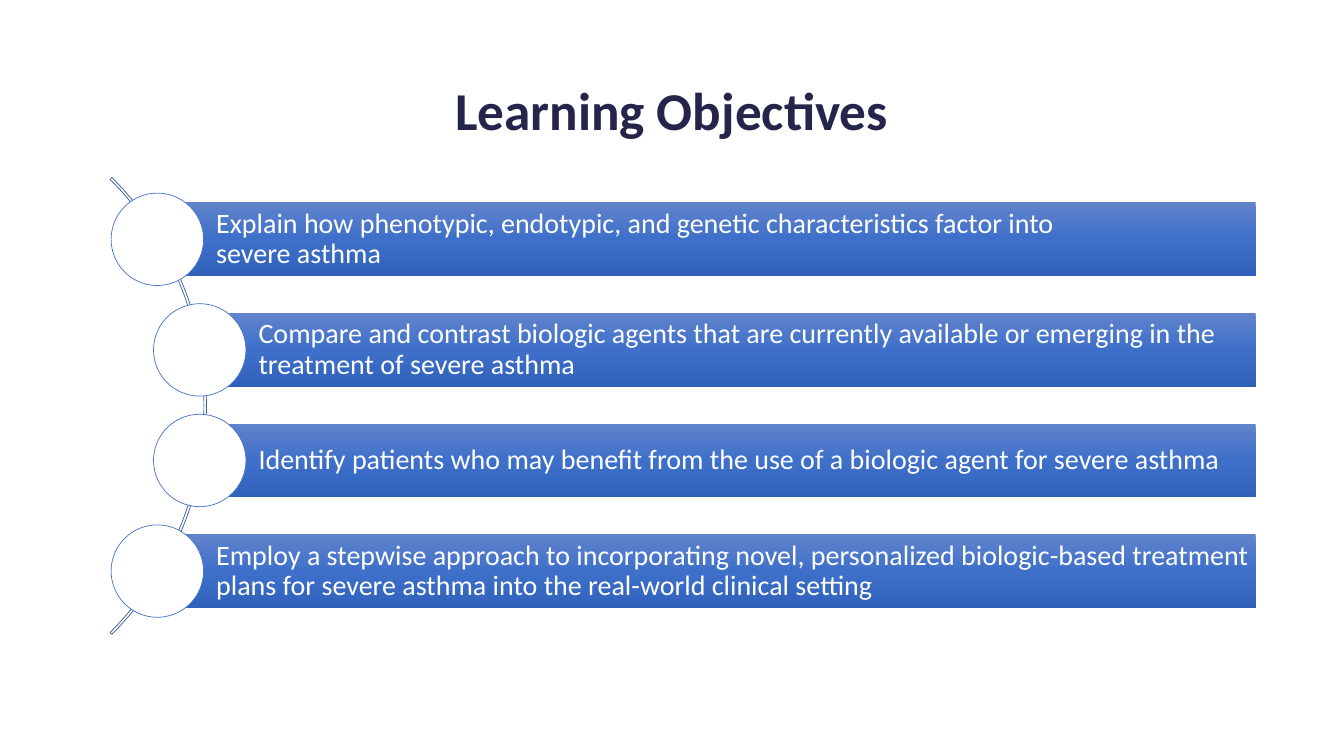
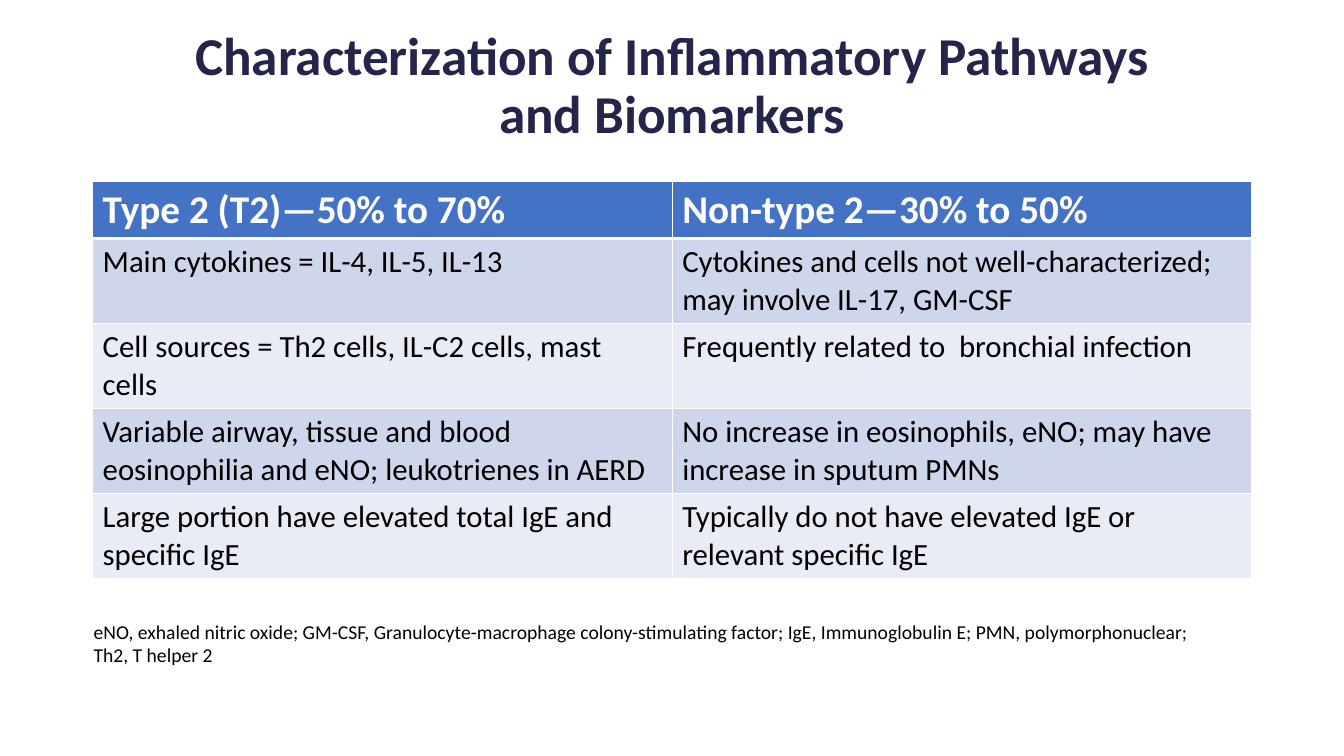
import copy

from lxml import etree
from pptx import Presentation
from pptx.dml.color import RGBColor
from pptx.enum import shapes, text
from pptx.oxml import ns
from pptx.util import Pt

FONT = "Calibri"
NAVY = RGBColor(0x25, 0x25, 0x4B)
BLUE = RGBColor(0x44, 0x72, 0xC4)
ARC_BLUE = RGBColor(0x36, 0x5B, 0x9D)
BAR_STOPS = [RGBColor(0x61, 0x83, 0xCB), RGBColor(0x3E, 0x70, 0xCA), RGBColor(0x30, 0x62, 0xBB)]
BAND_DARK = RGBColor(0xCF, 0xD5, 0xEA)
BAND_LIGHT = RGBColor(0xE9, 0xEB, 0xF5)
WHITE = RGBColor(0xFF, 0xFF, 0xFF)
BLACK = RGBColor(0x00, 0x00, 0x00)


def write(tf, lines, size, color, bold=False, align=text.PP_ALIGN.LEFT, spacing=None):
    """Fill the first paragraph, one run per line."""
    tf.word_wrap = True
    p = tf.paragraphs[0]
    p.alignment = align
    p.line_spacing = spacing
    for i, line in enumerate(lines):
        if i:
            p.add_line_break()
        r = p.add_run()
        r.text = line
        r.font.name = FONT
        r.font.size = Pt(size)
        r.font.bold = bold
        r.font.color.rgb = color


def add_titled_slide(lines, left, top, width):
    s = prs.slides.add_slide(prs.slide_layouts[6])
    tf = s.shapes.add_textbox(Pt(left), Pt(top), Pt(width), Pt(104.4)).text_frame
    tf.vertical_anchor = text.MSO_ANCHOR.MIDDLE
    write(tf, lines, 38, NAVY, True, text.PP_ALIGN.CENTER, 0.9)
    return s


prs = Presentation()
prs.slide_width, prs.slide_height = Pt(960), Pt(540)

# Slide 1: objectives along an arc
s = add_titled_slide(["Learning Objectives"], 48, 28.8, 864)

arc = s.shapes.add_shape(shapes.MSO_SHAPE.BLOCK_ARC, Pt(-314), Pt(59.2), Pt(461.5), Pt(461.5))
arc.adjustments[0] = 189
arc.adjustments[1] = 27
arc.adjustments[2] = 0.004
arc.shadow.inherit = False
arc.fill.background()
arc.line.color.rgb = ARC_BLUE
arc.line.width = Pt(0.5)

OUTER, INNER = 112.4, 142.7
BAR_RIGHT, BAR_TOP, BAR_HEIGHT, BAR_PITCH = 897, 144.6, 52.7, 79
CIRCLE = 66

objectives = [
    (OUTER, ["Explain how phenotypic, endotypic, and genetic characteristics factor into",
             "severe asthma"]),
    (INNER, ["Compare and contrast biologic agents that are currently available or emerging "
             "in the treatment of severe asthma"]),
    (INNER, ["Identify patients who may benefit from the use of a biologic agent for severe asthma"]),
    (OUTER, ["Employ a stepwise approach to incorporating novel, personalized biologic-based "
             "treatment plans for severe asthma into the real-world clinical setting"]),
]
for i, (left, lines) in enumerate(objectives):
    top = BAR_TOP + i * BAR_PITCH

    # Gradient bar with its text
    bar = s.shapes.add_shape(shapes.MSO_SHAPE.RECTANGLE, Pt(left), Pt(top),
                             Pt(BAR_RIGHT - left), Pt(BAR_HEIGHT))
    bar.shadow.inherit = False
    bar.line.fill.background()
    bar.fill.gradient()
    bar.fill.gradient_angle = 270
    stops = bar._element.spPr.find(".//" + ns.qn("a:gsLst"))
    stops.insert(1, copy.deepcopy(stops[0]))
    for stop, color, position in zip(bar.fill.gradient_stops, BAR_STOPS, (0, 0.5, 1)):
        stop.color.rgb = color
        stop.position = position
    tf = bar.text_frame
    tf.vertical_anchor = text.MSO_ANCHOR.MIDDLE
    tf.margin_left = Pt(42)
    tf.margin_right = tf.margin_top = tf.margin_bottom = Pt(4)
    write(tf, lines, 20, WHITE, spacing=0.9)

    # Circle centred on the bar's left end
    circle = s.shapes.add_shape(shapes.MSO_SHAPE.OVAL, Pt(left - CIRCLE / 2),
                                Pt(top + (BAR_HEIGHT - CIRCLE) / 2), Pt(CIRCLE), Pt(CIRCLE))
    circle.shadow.inherit = False
    circle.fill.solid()
    circle.fill.fore_color.rgb = WHITE
    circle.line.color.rgb = BLUE
    circle.line.width = Pt(0.5)

# Slide 2: comparison table
s = add_titled_slide(["Characterization of Inflammatory Pathways", "and Biomarkers"], 66.2, 10.1, 828)

rows = [
    ("Type 2 (T2)—50% to 70%", "Non-type 2—30% to 50%"),
    ("Main cytokines = IL-4, IL-5, IL-13",
     "Cytokines and cells not well-characterized; may involve IL-17, GM-CSF"),
    ("Cell sources = Th2 cells, IL-C2 cells, mast cells",
     "Frequently related to  bronchial infection"),
    ("Variable airway, tissue and blood eosinophilia and eNO; leukotrienes in AERD",
     "No increase in eosinophils, eNO; may have increase in sputum PMNs"),
    ("Large portion have elevated total IgE and specific IgE",
     "Typically do not have elevated IgE or relevant specific IgE"),
]
table = s.shapes.add_table(len(rows), 2, Pt(66.2), Pt(129.6), Pt(828), Pt(283.4)).table
for i, row in enumerate(rows):
    header = i == 0
    table.rows[i].height = Pt(40.6 if header else 60.7)
    for j, label in enumerate(row):
        cell = table.cell(i, j)
        write(cell.text_frame, [label], 28 if header else 22, WHITE if header else BLACK, header)
        cell.fill.solid()
        cell.fill.fore_color.rgb = BLUE if header else (BAND_LIGHT, BAND_DARK)[i % 2]

        # White borders, heavier under the header
        widths = {"lnL": 1, "lnR": 1, "lnT": 3 if i == 1 else 1, "lnB": 3 if header else 1}
        tcPr = cell._tc.get_or_add_tcPr()
        for k, (side, width) in enumerate(widths.items()):
            ln = etree.Element(ns.qn("a:" + side), w=str(Pt(width)))
            fill = etree.SubElement(ln, ns.qn("a:solidFill"))
            etree.SubElement(fill, ns.qn("a:srgbClr"), val=str(WHITE))
            tcPr.insert(k, ln)

# Abbreviations
tf = s.shapes.add_textbox(Pt(59.8), Pt(439.2), Pt(828), Pt(41)).text_frame
write(tf, ["eNO, exhaled nitric oxide; GM-CSF, Granulocyte-macrophage colony-stimulating factor; "
           "IgE, Immunoglobulin E; PMN, polymorphonuclear;", "Th2, T helper 2"], 14, BLACK)

prs.save("out.pptx")
